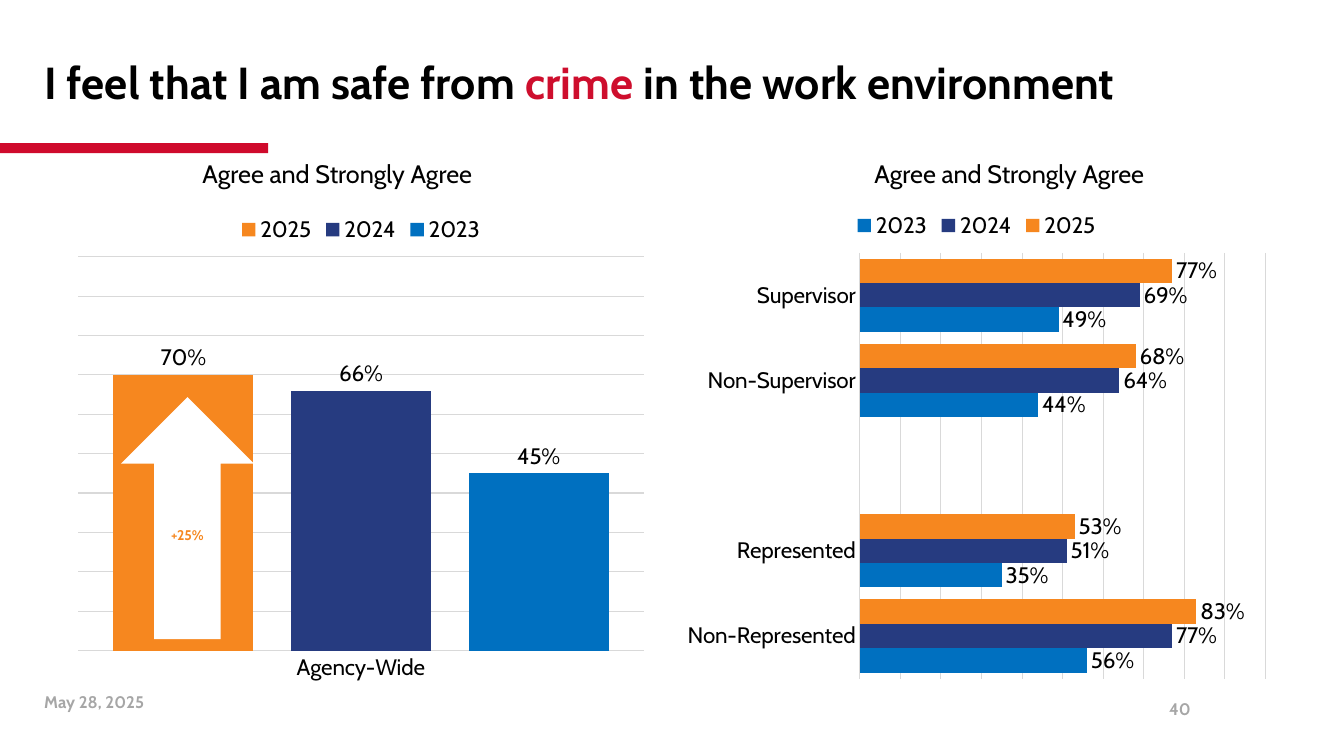
from pptx import Presentation, util as u
from pptx.chart.data import CategoryChartData
from pptx.dml.color import RGBColor
from pptx.enum import chart as ch, shapes, text

BLACK, WHITE, GRAY, GRID = "000000", "FFFFFF", "A6A6A6", "D9D9D9"
RED, ORANGE, NAVY, BLUE = "CF0A2C", "F6871F", "263B80", "0070C0"
YEAR_COLORS = {"2025": ORANGE, "2024": NAVY, "2023": BLUE}
LEFT, CENTER, RIGHT = text.PP_ALIGN.LEFT, text.PP_ALIGN.CENTER, text.PP_ALIGN.RIGHT
TOP, MIDDLE = text.MSO_ANCHOR.TOP, text.MSO_ANCHOR.MIDDLE


def rgb(hex_color):
    return RGBColor.from_string(hex_color)


class SurveySlide:
    """Draws survey elements placed by percentages of the slide size."""

    font_name = "Cabin"

    def __init__(self):
        self.deck = Presentation()
        self.deck.slide_width, self.deck.slide_height = u.Inches(13.33), u.Inches(7.5)
        self.slide = self.deck.slides.add_slide(self.deck.slide_layouts[6])

    def place(self, x, y, w, h):
        width, height = self.deck.slide_width, self.deck.slide_height
        return [round(share * side / 100)
                for share, side in zip((x, y, w, h), (width, height, width, height))]

    def style(self, font, size, color, bold=False):
        font.name, font.size, font.bold = self.font_name, u.Pt(size), bold
        font.color.rgb = rgb(color)

    def add_words(self, frame, runs, size, bold=False, align=LEFT, anchor=TOP):
        frame.word_wrap = True
        frame.vertical_anchor = anchor
        paragraph = frame.paragraphs[0]
        paragraph.alignment = align
        for words, color in runs:
            run = paragraph.add_run()
            run.text = words
            self.style(run.font, size, color, bold)
        return paragraph

    def label(self, spot, runs, size, **look):
        box = self.slide.shapes.add_textbox(*self.place(*spot))
        return self.add_words(box.text_frame, runs, size, **look)

    def block(self, preset, spot, color):
        block = self.slide.shapes.add_shape(preset, *self.place(*spot))
        block.shadow.inherit = False
        block.fill.solid()
        block.fill.fore_color.rgb = rgb(color)
        block.line.fill.background()
        return block

    def chart(self, kind, spot, groups, results, overlap=0, top_down=False):
        data = CategoryChartData(number_format="0%")
        data.categories = groups
        for year, shares in results.items():
            data.add_series(year, shares)
        chart = self.slide.shapes.add_chart(kind, *self.place(*spot), data).chart
        self.style(chart.font, 16, BLACK)
        chart.has_title = False
        chart.has_legend = True
        chart.legend.position = ch.XL_LEGEND_POSITION.TOP
        chart.legend.include_in_layout = False
        self.style(chart.legend.font, 16, BLACK)

        groups_axis, share_axis = chart.category_axis, chart.value_axis
        groups_axis.major_tick_mark = ch.XL_TICK_MARK.NONE
        groups_axis.reverse_order = top_down
        self.style(groups_axis.tick_labels.font, 16, BLACK)
        share_axis.minimum_scale, share_axis.maximum_scale = 0, 1
        share_axis.major_unit = 0.1
        share_axis.visible = False
        share_axis.has_major_gridlines = True
        for line in (groups_axis.format.line, share_axis.major_gridlines.format.line):
            line.color.rgb = rgb(GRID)
            line.width = u.Pt(0.75)

        plot = chart.plots[0]
        plot.gap_width, plot.overlap = 50, overlap
        plot.vary_by_categories = False
        for series in plot.series:
            series.invert_if_negative = False
            series.format.fill.solid()
            series.format.fill.fore_color.rgb = rgb(YEAR_COLORS[series.name])
            labels = series.data_labels
            labels.show_value = True
            labels.number_format, labels.number_format_is_linked = "0%", False
            labels.position = ch.XL_LABEL_POSITION.OUTSIDE_END
            self.style(labels.font, 16, BLACK)


def main():
    page = SurveySlide()
    page.block(shapes.MSO_SHAPE.RECTANGLE, (0, 18.93, 19.95, 1.33), RED)
    headline = page.label(
        (2.55, 3.07, 97.45, 16.4),
        [("I feel that I am safe from ", BLACK), ("crime", "CE0E2D"),
         (" in the work environment", BLACK)],
        32, bold=True, anchor=MIDDLE)
    headline.line_spacing = 0.9

    page.chart(
        ch.XL_CHART_TYPE.BAR_CLUSTERED, (50.26, 26.53, 44.79, 64.53),
        ["Supervisor", "Non-Supervisor", "", "Represented", "Non-Represented"],
        {"2025": (0.77, 0.68, None, 0.53, 0.83),
         "2024": (0.69, 0.64, None, 0.51, 0.77),
         "2023": (0.49, 0.44, None, 0.35, 0.56)},
        top_down=True)
    for half in (0.2, 50.2):
        page.label((half, 20.27, 49.8, 5.33), [("Agree and Strongly Agree", BLACK)],
                   18, align=CENTER)
    page.chart(
        ch.XL_CHART_TYPE.COLUMN_CLUSTERED, (4.95, 27.07, 43.81, 64.27),
        ["Agency-Wide"], {"2025": (0.7,), "2024": (0.66,), "2023": (0.45,)},
        overlap=-27)

    date = page.label((2.55, 90.8, 23.03, 5.33), [("May 28, 2025", GRAY)], 12, bold=True)
    date.space_after = u.Pt(12)
    increase = page.block(shapes.MSO_SHAPE.UP_ARROW, (9, 52.53, 9.9, 32), WHITE)
    page.add_words(increase.text_frame, [("+25%", ORANGE)], 10, bold=True,
                   align=CENTER, anchor=MIDDLE)
    number = page.label((66.84, 91.07, 22.5, 5.33), [("40", GRAY)], 12, bold=True,
                        align=RIGHT, anchor=MIDDLE)
    number.space_after = u.Pt(6)
    page.deck.save("out.pptx")


if __name__ == "__main__":
    main()
